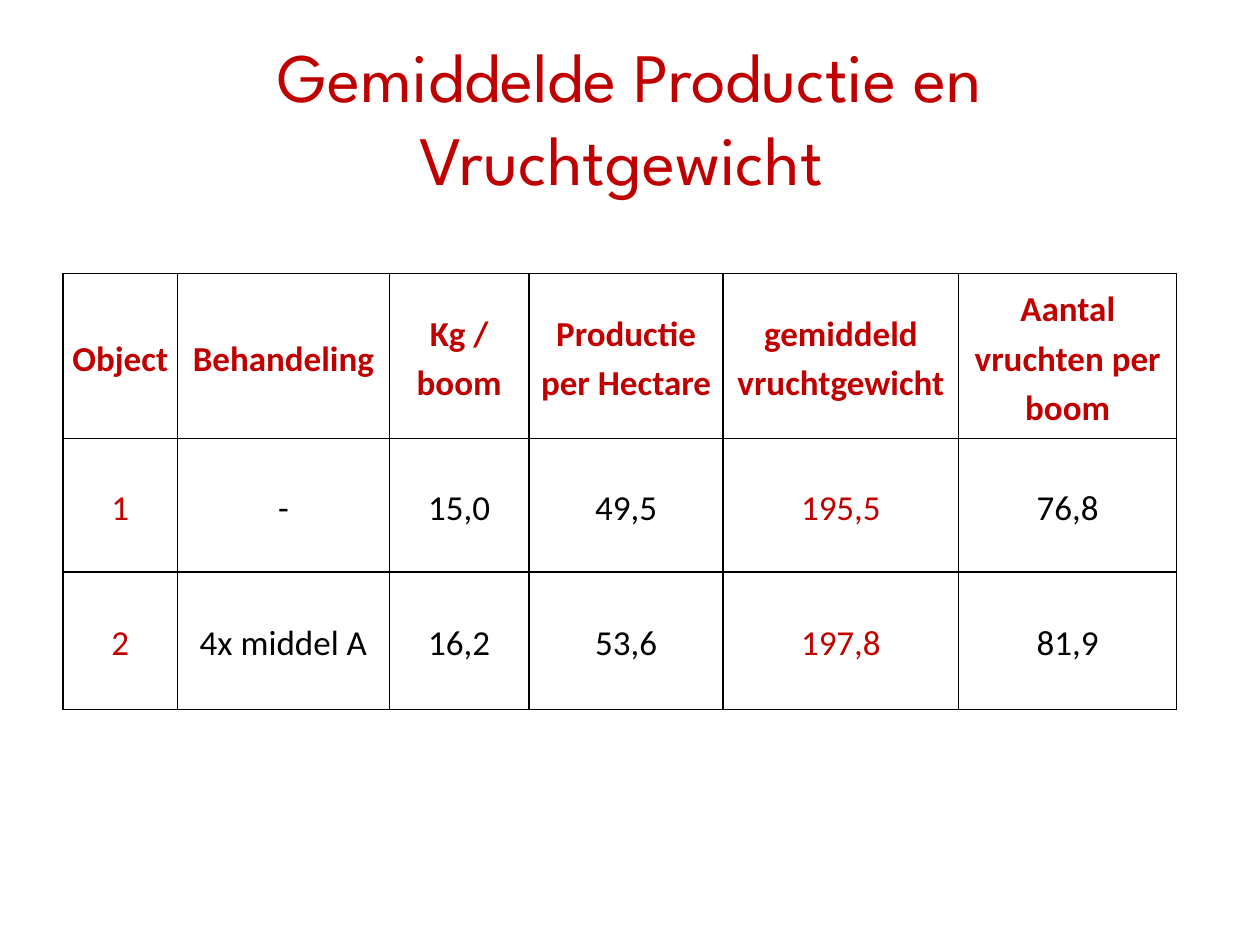
import lxml.etree
import pptx
import pptx.dml.color
import pptx.enum.text
import pptx.oxml.ns
import pptx.util

Inches = pptx.util.Inches
Pt = pptx.util.Pt
CENTER = pptx.enum.text.PP_ALIGN.CENTER
MIDDLE = pptx.enum.text.MSO_ANCHOR.MIDDLE

RED = "C00000"
BLACK = "000000"
RED_COLUMNS = (0, 4)
COLUMN_WIDTHS = [0.91, 1.68, 1.11, 1.54, 1.87, 1.73]
ROW_HEIGHTS = [1.31, 1.06, 1.09]
ROWS = [
    ["Object", "Behandeling", "Kg /\nboom", "Productie per Hectare",
     "gemiddeld vruchtgewicht", "Aantal vruchten per boom"],
    ["1", "-", "15,0", "49,5", "195,5", "76,8"],
    ["2", "4x middel A", "16,2", "53,6", "197,8", "81,9"],
]


def color(value):
    return pptx.dml.color.RGBColor.from_string(value)


def format_text(paragraph, font_name, size, text_color, bold=False):
    paragraph.alignment = CENTER
    for run in paragraph.runs:
        run.font.name = font_name
        run.font.size = Pt(size)
        run.font.bold = bold
        run.font.color.rgb = color(text_color)


def add_title(slide, text):
    shape = slide.shapes.add_textbox(Inches(0.5), Inches(0.3), Inches(9), Inches(1.25))
    text_frame = shape.text_frame
    text_frame.word_wrap = True
    text_frame.vertical_anchor = MIDDLE
    text_frame.text = text
    format_text(text_frame.paragraphs[0], "League Spartan", 39.6, RED)


def add_borders(cell, line_color, width):
    properties = cell._tc.get_or_add_tcPr()
    qn = pptx.oxml.ns.qn
    for index, side in enumerate(("lnL", "lnR", "lnT", "lnB")):
        line = lxml.etree.Element(qn(f"a:{side}"), w=str(Pt(width)))
        fill = lxml.etree.SubElement(line, qn("a:solidFill"))
        lxml.etree.SubElement(fill, qn("a:srgbClr"), val=line_color)
        # Borders come before the cell fill
        properties.insert(index, line)


def fill_cell(cell, text, text_color, bold):
    cell.margin_left = cell.margin_right = Inches(0.07)
    cell.margin_top = cell.margin_bottom = 0
    cell.vertical_anchor = MIDDLE
    cell.fill.background()
    cell.text_frame.text = text
    for paragraph in cell.text_frame.paragraphs:
        paragraph.line_spacing = 1.15
        format_text(paragraph, "Calibri", 20, text_color, bold)
    add_borders(cell, BLACK, 1)


def add_results_table(slide):
    table = slide.shapes.add_table(
        len(ROWS), len(COLUMN_WIDTHS), Inches(0.5), Inches(2.17),
        Inches(sum(COLUMN_WIDTHS)), Inches(sum(ROW_HEIGHTS))).table
    table.horz_banding = False
    for column, width in zip(table.columns, COLUMN_WIDTHS):
        column.width = Inches(width)
    for row, height in zip(table.rows, ROW_HEIGHTS):
        row.height = Inches(height)
    for row_index, texts in enumerate(ROWS):
        is_header = row_index == 0
        for column_index, text in enumerate(texts):
            is_red = is_header or column_index in RED_COLUMNS
            fill_cell(table.cell(row_index, column_index), text,
                      RED if is_red else BLACK, is_header)


def main():
    presentation = pptx.Presentation()
    presentation.slide_width = Inches(10)
    presentation.slide_height = Inches(7.5)
    slide = presentation.slides.add_slide(presentation.slide_layouts[6])

    # Title above the results per treatment
    add_title(slide, "Gemiddelde Productie en Vruchtgewicht ")
    add_results_table(slide)

    presentation.save("out.pptx")


if __name__ == "__main__":
    main()
